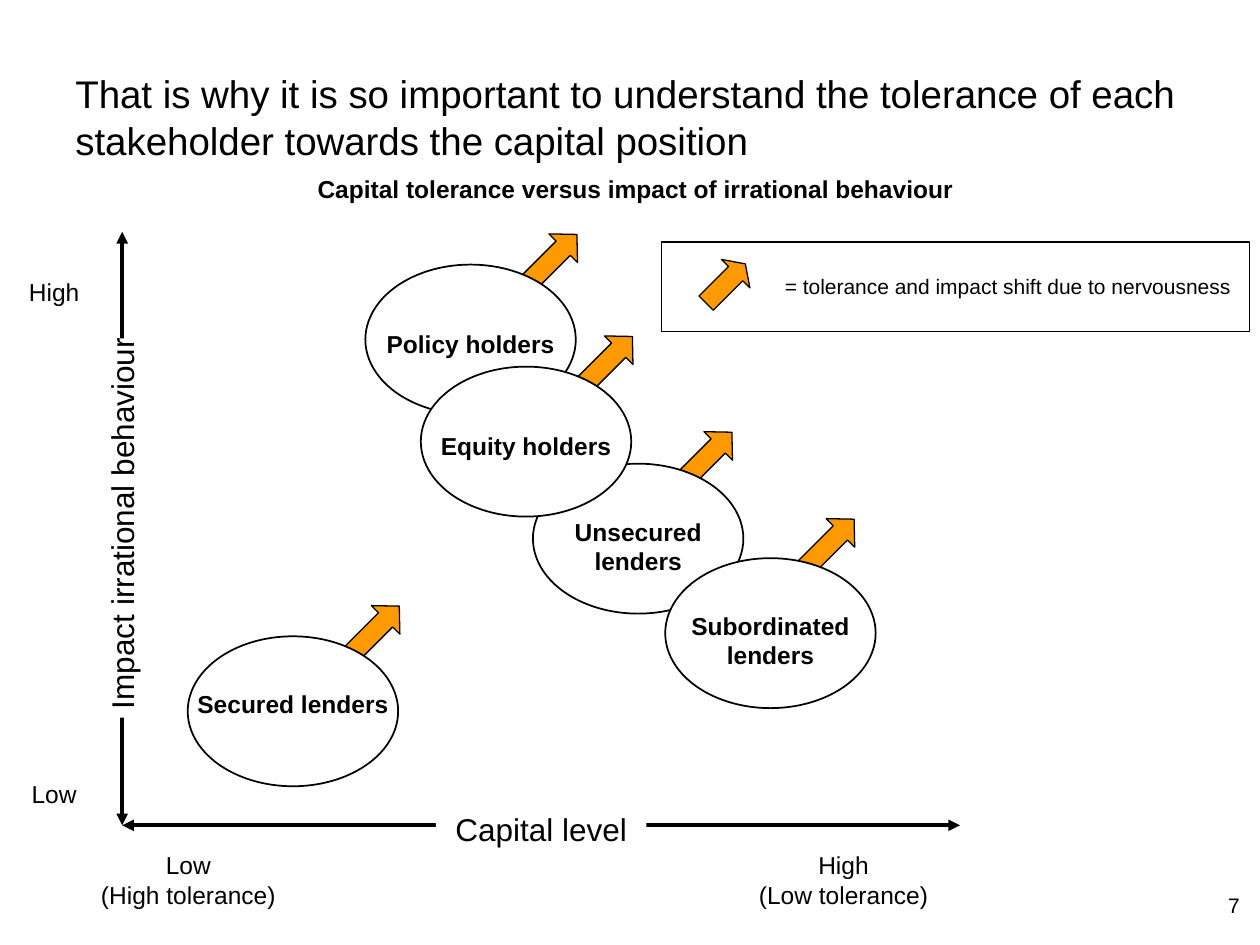
from dataclasses import dataclass

from lxml import etree
from pptx import Presentation
from pptx.dml.color import RGBColor
from pptx.enum import shapes, text
from pptx.oxml import ns
from pptx.util import Inches, Pt


@dataclass(frozen=True)
class Theme:
    font: str = "Arial"
    ink: RGBColor = RGBColor(0x00, 0x00, 0x00)
    paper: RGBColor = RGBColor(0xFF, 0xFF, 0xFF)
    accent: RGBColor = RGBColor(0xFF, 0x99, 0x00)
    title: int = 22
    axis: int = 18
    label: int = 14
    small: int = 12
    thin: float = 0.75
    outline: float = 1
    axis_line: float = 2.25


THEME = Theme()
LEFT, CENTER, RIGHT = text.PP_ALIGN.LEFT, text.PP_ALIGN.CENTER, text.PP_ALIGN.RIGHT
TOP, MIDDLE = text.MSO_ANCHOR.TOP, text.MSO_ANCHOR.MIDDLE

ELLIPSE_SIZE = (1.67, 1.19)
LABEL_WIDTH = 1.52
ARROW_SIZE = (0.62, 0.32)
ORIGIN = (0.97, 6.55)

# Name, ellipse left and top, arrow offset from the ellipse, lines in the name
STAKEHOLDERS = [
    ("Secured lenders", 1.49, 5.05, (1.15, -0.18), 2),
    ("Unsecured lenders", 4.23, 3.68, (1.05, -0.19), 2),
    ("Policy holders", 2.9, 2.1, (1.15, -0.18), 1),
    ("Subordinated lenders", 5.28, 4.43, (0.97, -0.25), 2),
    ("Equity holders", 3.34, 2.91, (1.15, -0.18), 1),
]


def write(shape, content, size, align=CENTER, bold=False, inset=0.05,
          anchor=TOP, wrap=True):
    frame = shape.text_frame
    frame.text = content
    frame.word_wrap = wrap
    frame.vertical_anchor = anchor
    frame.margin_left = frame.margin_right = Inches(inset)
    frame.margin_top = frame.margin_bottom = Inches(min(inset, 0.05))
    for paragraph in frame.paragraphs:
        paragraph.alignment = align
        paragraph.font.name = THEME.font
        paragraph.font.size = Pt(size)
        paragraph.font.bold = bold
        paragraph.font.color.rgb = THEME.ink


def add_text(slide, box, content, size, **style):
    shape = slide.shapes.add_textbox(*map(Inches, box))
    write(shape, content, size, **style)


def add_filled(slide, kind, box, fill, line_width=None):
    """Add a flat shape, outlined only if a line width is given."""
    shape = slide.shapes.add_shape(kind, *map(Inches, box))
    shape.shadow.inherit = False
    shape.fill.solid()
    shape.fill.fore_color.rgb = fill
    if line_width is None:
        shape.line.fill.background()
    else:
        shape.line.color.rgb = THEME.ink
        shape.line.width = Pt(line_width)
    return shape


def add_shift_arrow(slide, left, top, size=ARROW_SIZE, head=0.48):
    arrow = add_filled(slide, shapes.MSO_SHAPE.RIGHT_ARROW, (left, top, *size),
                       THEME.accent, THEME.thin)
    arrow.adjustments[1] = head
    arrow.rotation = 315


def add_stakeholder(slide, name, left, top, lines):
    width, height = ELLIPSE_SIZE
    add_filled(slide, shapes.MSO_SHAPE.OVAL, (left, top, width, height),
               THEME.paper, THEME.outline)
    label_top = top + (0.51 if lines == 1 else 0.42)
    label_left = left + (width - LABEL_WIDTH) / 2
    add_text(slide, (label_left, label_top, LABEL_WIDTH, 0.23 * lines), name,
             THEME.label, bold=True, inset=0)


def add_axis(slide, start, end):
    """Add a line with an arrowhead at both ends."""
    axis = slide.shapes.add_connector(shapes.MSO_CONNECTOR.STRAIGHT,
                                      *map(Inches, (*start, *end)))
    axis.line.color.rgb = THEME.ink
    axis.line.width = Pt(THEME.axis_line)
    outline = axis.line._get_or_add_ln()
    for tag in ("a:headEnd", "a:tailEnd"):
        etree.SubElement(outline, ns.qn(tag), type="triangle")
    etree.SubElement(axis._element.spPr, ns.qn("a:effectLst"))


def add_axis_name(slide, box, content, rotation=0, **style):
    shape = add_filled(slide, shapes.MSO_SHAPE.RECTANGLE, box, THEME.paper)
    shape.rotation = rotation
    write(shape, content, THEME.axis, **style)


def add_axes(slide):
    add_axis(slide, ORIGIN, (7.62, ORIGIN[1]))
    add_axis(slide, (ORIGIN[0], 1.84), ORIGIN)
    add_axis_name(slide, (3.46, 6.38, 1.67, 0.4), "Capital level")
    add_axis_name(slide, (-0.54, 4.04, 3.01, 0.3), " Impact irrational behaviour",
                  rotation=270, inset=0, anchor=MIDDLE, wrap=False)
    for left, content in ((0.44, "Low\n(High tolerance)"), (5.64, "High\n(Low tolerance)")):
        add_text(slide, (left, 6.7, 2.11, 0.57), content, THEME.label)
    for top, content in ((2.15, "High"), (6.13, "Low")):
        add_text(slide, (0.08, top, 0.7, 0.33), content, THEME.label)


def add_legend(slide):
    add_filled(slide, shapes.MSO_SHAPE.RECTANGLE, (5.25, 1.92, 4.67, 0.71),
               THEME.paper, THEME.thin)
    add_shift_arrow(slide, 5.54, 2.09, size=(0.44, 0.32), head=0.34)
    add_text(slide, (6.13, 2.12, 3.79, 0.3),
             "= tolerance and impact shift due to nervousness",
             THEME.small, align=LEFT, inset=0.1)


def main():
    presentation = Presentation()
    presentation.slide_width, presentation.slide_height = Inches(10), Inches(7.5)
    slide = presentation.slides.add_slide(presentation.slide_layouts[6])

    add_text(slide, (0.5, 0.3, 9, 1.25),
             "That is why it is so important to understand the tolerance of each "
             "stakeholder towards the capital position",
             THEME.title, align=LEFT, inset=0.1, anchor=MIDDLE)
    add_text(slide, (2.17, 1.33, 5.75, 0.33),
             "Capital tolerance versus impact of irrational behaviour",
             THEME.label, bold=True, inset=0.1)
    add_axes(slide)
    for _, left, top, (shift_x, shift_y), _ in STAKEHOLDERS:
        add_shift_arrow(slide, left + shift_x, top + shift_y)
    for name, left, top, _, lines in STAKEHOLDERS:
        add_stakeholder(slide, name, left, top, lines)
    add_legend(slide)
    add_text(slide, (9.53, 7.08, 0.31, 0.2), "7", THEME.small, align=RIGHT, inset=0)

    presentation.save("out.pptx")


if __name__ == "__main__":
    main()
